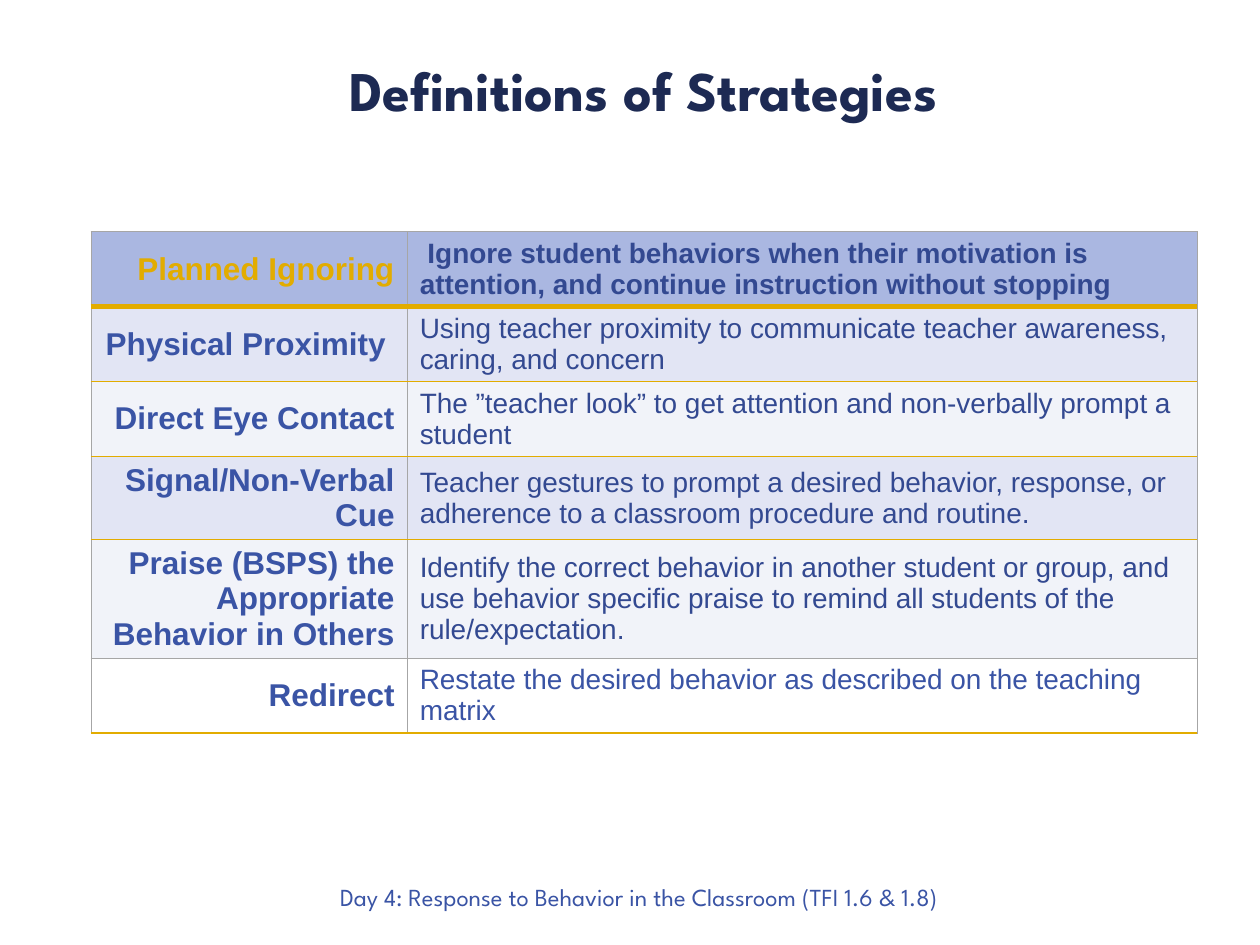
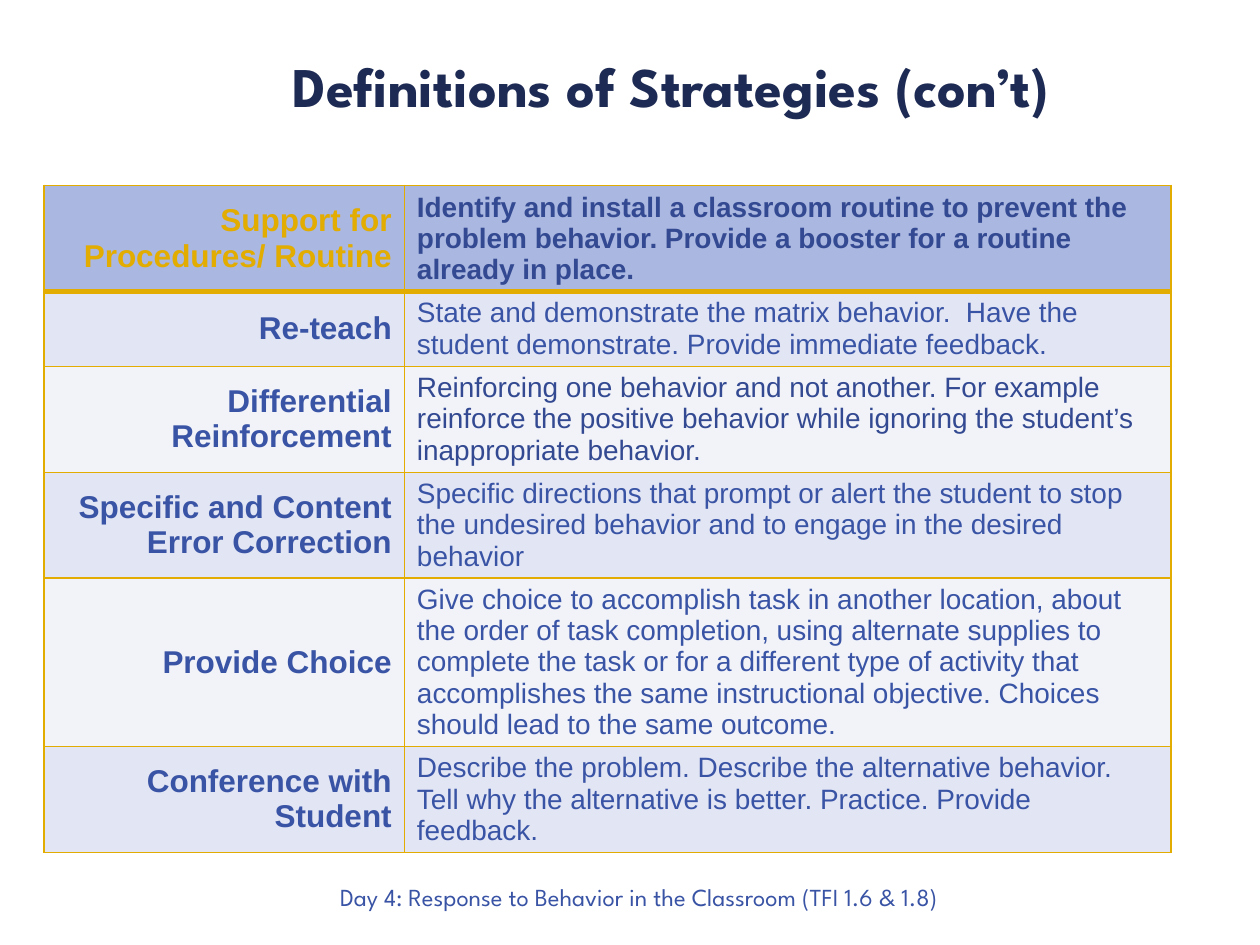
import pptx
import pptx.util
import pptx.dml.color
import pptx.enum.text
import lxml.etree

Pt = pptx.util.Pt
ALIGN = pptx.enum.text.PP_ALIGN
MIDDLE = pptx.enum.text.MSO_ANCHOR.MIDDLE

# Shared look
NAVY, BLUE, DARK_BLUE = "1D2A53", "3A54A5", "334991"
GOLD, GREY = "E2AC00", "A6A6A6"
HEADER_FILL, ODD_FILL, EVEN_FILL, WHITE = "AAB7E1", "E2E5F4", "F1F3F9", "FFFFFF"
BANDS = [HEADER_FILL, ODD_FILL, EVEN_FILL, ODD_FILL, EVEN_FILL]
FOOTER = "Day 4: Response to Behavior in the Classroom (TFI 1.6 & 1.8)"
THIN, RULE, HEAVY = (GREY, 0.5), (GOLD, 1), (GOLD, 3)


def format_text(frame, colour, align, **font_values):
    paragraph = frame.paragraphs[0]
    paragraph.alignment = align
    font = paragraph.runs[0].font
    for key, value in font_values.items():
        setattr(font, key, value)
    font.color.rgb = pptx.dml.color.RGBColor.from_string(colour)


def add_border(cell, side, colour, width):
    properties = cell._tc.get_or_add_tcPr()
    ns = "{http://schemas.openxmlformats.org/drawingml/2006/main}"
    line = lxml.etree.SubElement(properties, ns + "ln" + side, w=str(Pt(width)))
    fill = lxml.etree.SubElement(line, ns + "solidFill")
    lxml.etree.SubElement(fill, ns + "srgbClr", val=colour)


# Each row: strategy, definition, definition colour, height
pages = [
    {
        "title": "Definitions of Strategies",
        "title_at": (92.9, 25.2),
        "table_at": (52, 132.5),
        "columns": (180.7, 451.4),
        "fills": BANDS + [WHITE],
        "sides": THIN,
        "rules": [THIN, HEAVY, RULE, RULE, RULE, THIN, RULE],
        "rows": [
            ("Planned Ignoring",
             " Ignore student behaviors when their motivation is attention, "
             "and continue instruction without stopping", DARK_BLUE, 42),
            ("Physical Proximity ",
             "Using teacher proximity to communicate teacher awareness, "
             "caring, and concern", DARK_BLUE, 42),
            ("Direct Eye Contact",
             "The ”teacher look” to get attention and non-verbally prompt "
             "a student", DARK_BLUE, 42),
            ("Signal/Non-Verbal Cue",
             "Teacher gestures to prompt a desired behavior, response, or "
             "adherence to a classroom procedure and routine.", DARK_BLUE, 47),
            ("Praise (BSPS) the Appropriate Behavior in Others",
             "Identify the correct behavior in another student or group, and "
             "use behavior specific praise to remind all students of the "
             "rule/expectation.", DARK_BLUE, 67),
            ("Redirect",
             "Restate the desired behavior as described on the teaching "
             "matrix", BLUE, 42),
        ],
    },
    {
        "title": "Definitions of Strategies (con’t)",
        "title_at": (108.7, 23),
        "table_at": (25.2, 106),
        "columns": (205.9, 438.2),
        "fills": BANDS + [ODD_FILL],
        "sides": RULE,
        "rules": [RULE, HEAVY] + [RULE] * 5,
        "rows": [
            ("Support for Procedures/ Routine",
             "Identify and install a classroom routine to prevent the problem "
             "behavior. Provide a booster for a routine already in place.",
             DARK_BLUE, 60),
            ("Re-teach",
             "State and demonstrate the matrix behavior.  Have the student "
             "demonstrate. Provide immediate feedback.", BLUE, 42),
            ("Differential Reinforcement",
             "Reinforcing one behavior and not another. For example reinforce "
             "the positive behavior while ignoring the student’s "
             "inappropriate behavior.", DARK_BLUE, 60),
            ("Specific and Content Error Correction",
             "Specific directions that prompt or alert the student to stop "
             "the undesired behavior and to engage in the desired behavior",
             BLUE, 60),
            ("Provide Choice",
             "Give choice to accomplish task in another location, about the "
             "order of task completion, using alternate supplies to complete "
             "the task or for a different type of activity that accomplishes "
             "the same instructional objective. Choices should lead to the "
             "same outcome.", BLUE, 96),
            ("Conference with Student",
             "Describe the problem. Describe the alternative behavior. Tell "
             "why the alternative is better. Practice. Provide feedback.",
             BLUE, 60),
        ],
    },
]

deck = pptx.Presentation()
deck.slide_width, deck.slide_height = Pt(720), Pt(540)
layout = deck.slide_layouts[5]

for number, page in enumerate(pages):
    slide = deck.slides.add_slide(layout)

    # Footer, moved to the layout so that every slide shows it
    if number == 0:
        footer = slide.shapes.add_textbox(Pt(187.2), Pt(496.8), Pt(395.3), Pt(27.4))
        footer.text_frame.text = FOOTER
        for key in ("margin_left", "margin_right", "margin_top", "margin_bottom"):
            setattr(footer.text_frame, key, Pt(7.2))
        footer.text_frame.word_wrap = True
        format_text(footer.text_frame, BLUE, ALIGN.LEFT,
                    name="League Spartan", size=Pt(14))
        layout.shapes.element.append(footer.element)

    # Title
    title = slide.shapes.title
    title.left, title.top = (Pt(value) for value in page["title_at"])
    title.width, title.height = Pt(550), Pt(51)
    title.text_frame.text = page["title"]
    title.text_frame.vertical_anchor = MIDDLE
    title.text_frame.auto_size = pptx.enum.text.MSO_AUTO_SIZE.NONE
    format_text(title.text_frame, NAVY, ALIGN.CENTER,
                name="League Spartan", size=Pt(32), bold=True)

    # Table of strategies
    left, top = page["table_at"]
    height = sum(row[3] for row in page["rows"])
    strategies = slide.shapes.add_table(
        len(page["rows"]), 2, Pt(left), Pt(top),
        Pt(sum(page["columns"])), Pt(height)).table
    for column, width in zip(strategies.columns, page["columns"]):
        column.width = Pt(width)

    for r, (strategy, definition, colour, row_height) in enumerate(page["rows"]):
        strategies.rows[r].height = Pt(row_height)
        is_header = r == 0
        cells = [
            (strategy, GOLD if is_header else BLUE, ALIGN.RIGHT, 18, True),
            (definition, colour, ALIGN.LEFT, 16, is_header),
        ]
        for c, (text, text_colour, align, size, bold) in enumerate(cells):
            cell = strategies.cell(r, c)
            cell.text = text
            cell.vertical_anchor = MIDDLE
            format_text(cell.text_frame, text_colour, align,
                        name="Arial", size=Pt(size), bold=bold)
            borders = {"L": page["sides"], "R": page["sides"],
                       "T": page["rules"][r], "B": page["rules"][r + 1]}
            for side, (line_colour, line_width) in borders.items():
                add_border(cell, side, line_colour, line_width)
            cell.fill.solid()
            cell.fill.fore_color.rgb = pptx.dml.color.RGBColor.from_string(
                page["fills"][r])

deck.save("out.pptx")
